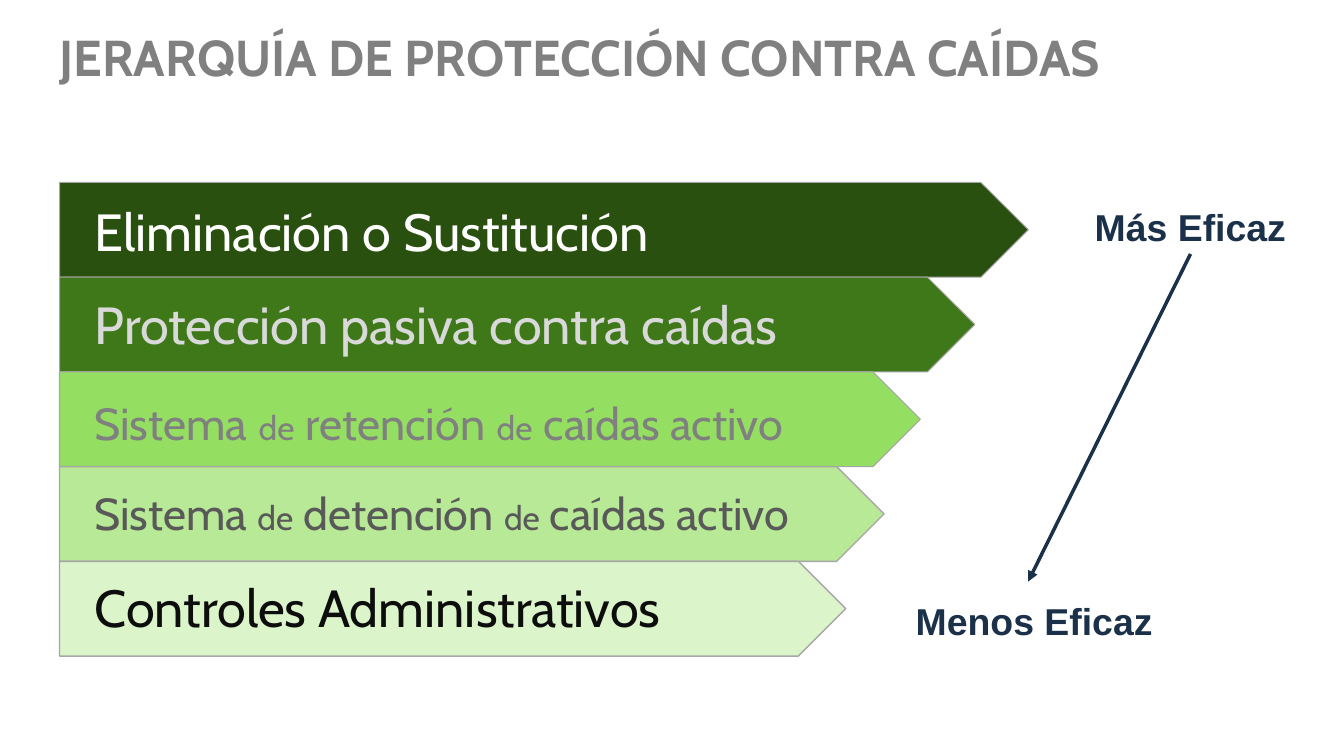
from dataclasses import dataclass

from lxml.etree import SubElement as Sub
from pptx import Presentation
from pptx.dml.color import RGBColor as Rgb
from pptx.enum.shapes import MSO_CONNECTOR as Conn, MSO_SHAPE as Form
from pptx.enum.text import MSO_ANCHOR as Anchor, MSO_AUTO_SIZE as Fit, PP_ALIGN as Align
from pptx.oxml.ns import qn
from pptx.util import Inches, Pt


@dataclass(frozen=True)
class Theme:
    head: str = "Cabin"
    note: str = "Arial"
    gray: str = "808080"
    edge: str = "A6A6A6"
    navy: str = "1B3049"
    title: float = 36
    big: float = 37.3
    mid: float = 32
    small: float = 24
    gap: float = 36
    tag: float = 26.7


class Deck:
    left, top, row = 4.43, 24.13, 12.53

    def __init__(self, theme):
        self.theme = theme
        self.prs = Presentation()
        self.prs.slide_width = Inches(13.33)
        self.prs.slide_height = Inches(7.5)
        self.slide = self.prs.slides.add_slide(self.prs.slide_layouts[5])
        self.shapes = self.slide.shapes

    def place(self, x, y, *size):
        w, h = self.prs.slide_width, self.prs.slide_height
        return [round(v * (h if i % 2 else w) / 100) for i, v in enumerate((x, y, *size))]

    def style(self, run, face, size, color, bold=False):
        font = run.font
        font.name, font.size, font.bold = face, Pt(size), bold
        font.color.rgb = Rgb.from_string(color)

    def title(self, text):
        box = self.shapes.title
        box.left, box.top, box.width, box.height = self.place(self.left, 4.13, 91.14, 6.53)
        frame = box.text_frame
        frame.text = text
        frame.auto_size = Fit.NONE
        frame.vertical_anchor = Anchor.MIDDLE
        frame.margin_left = frame.margin_right = frame.margin_top = frame.margin_bottom = 0
        line = frame.paragraphs[0]
        line.alignment = Align.LEFT
        self.style(line.runs[0], self.theme.head, self.theme.title, self.theme.gray, True)

    def text(self, x, y, w, h):
        frame = self.shapes.add_textbox(*self.place(x, y, w, h)).text_frame
        frame.word_wrap = True
        return frame

    def level(self, index, width, fill, edge, nudge, color, parts):
        y = self.top + index * self.row
        bar = self.shapes.add_shape(Form.PENTAGON, *self.place(self.left, y, width, self.row))
        bar.shadow.inherit = False
        bar.fill.solid()
        bar.fill.fore_color.rgb = Rgb.from_string(fill)
        bar.line.color.rgb = Rgb.from_string(self.theme.edge)
        bar.line.width = Pt(edge)
        line = self.text(6.3, y + nudge, 57.45, 9.73).paragraphs[0]
        for words, size in parts:
            run = line.add_run()
            run.text = words
            self.style(run, self.theme.head, size, color)

    def tag(self, text, x, y, w):
        frame = self.text(x, y, w, 7.2)
        frame.text = text
        frame.vertical_anchor = Anchor.MIDDLE
        line = frame.paragraphs[0]
        line.alignment = Align.CENTER
        self.style(line.runs[0], self.theme.note, self.theme.tag, self.theme.navy, True)

    def arrow(self, start, end):
        link = self.shapes.add_connector(Conn.STRAIGHT, *self.place(*start, *end))
        link.line.color.rgb = Rgb.from_string(self.theme.navy)
        link.line.width = Pt(2.5)
        Sub(link.line._get_or_add_ln(), qn("a:tailEnd"), type="triangle")
        Sub(link._element.spPr, qn("a:effectLst"))


def main():
    theme = Theme()
    big, mid, small = theme.big, theme.mid, theme.small
    gap = (" ", theme.gap)
    deck = Deck(theme)
    deck.title("JERARQUÍA DE PROTECCIÓN CONTRA CAÍDAS")
    levels = [
        (72.08, "2A5010", 0.75, 1.6, "FFFFFF", [("Eliminación o Sustitución", big)]),
        (68.1, "3F7819", 0.75, 1.33, "D9D9D9", [("Protección pasiva contra caídas", big)]),
        (64.05, "94DE61", 0.75, 1.73, theme.gray,
         [("Sistema", mid), gap, ("de", small), gap, ("retención", mid), gap,
          ("de", small), gap, ("caídas activo", mid)]),
        (61.35, "B7E996", 1, 1.87, "595959",
         [("Sistema ", mid), ("de", small), (" detención ", mid),
          ("de", small), (" caídas activo", mid)]),
        (58.5, "DBF4CA", 1, 1.2, "0D0D0D", [("Controles Administrativos", big)]),
    ]
    for index, level in enumerate(levels):
        deck.level(index, *level)
    deck.arrow((88.58, 33.6), (76.5, 76.93))
    deck.tag("Más Eficaz", 77.78, 26.4, 21.6)
    deck.tag("Menos Eficaz", 63.38, 78.53, 27.15)
    deck.prs.save("out.pptx")


if __name__ == "__main__":
    main()
